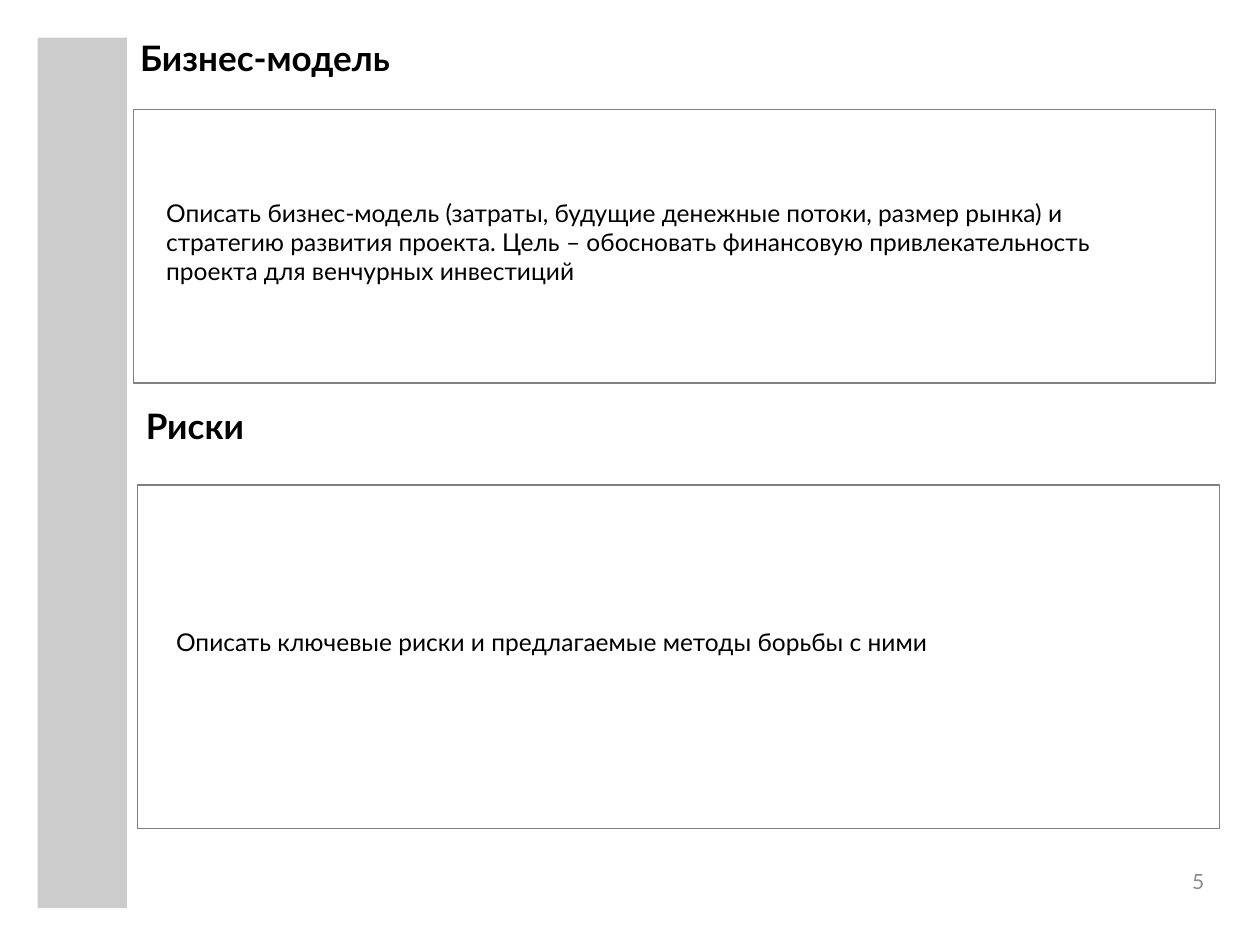
from pptx import Presentation
from pptx import util as u
from pptx.dml.color import RGBColor
from pptx.enum import shapes, text

FONT = "Lato"
BLACK, GREY, LIGHT, BORDER = "000000", "8C8C8C", "CCCCCC", "808080"

# Content: heading, description, then their places in cm (left, top, width, height)
SECTIONS = [
    dict(heading="Бизнес-модель", heading_at=(2.57, 0.61, 23.39, 1.73),
         frame_at=(2.69, 2.21, 21.82, 5.51),
         body="Описать бизнес-модель (затраты, будущие денежные потоки, размер рынка) "
              "и стратегию развития проекта. Цель – обосновать финансовую "
              "привлекательность проекта для венчурных инвестиций",
         body_at=(3.1, 3.86, 21.01, 2.06)),
    dict(heading="Риски", heading_at=(2.69, 8.03, 23.39, 1.73),
         frame_at=(2.77, 9.78, 21.82, 6.93),
         body="Описать ключевые риски и предлагаемые методы борьбы с ними",
         body_at=(3.3, 12.52, 21.01, 0.86)),
]
SIDEBAR_AT = (0.76, 0.76, 1.8, 17.55)
NUMBER, NUMBER_AT = "5", (23.29, 17.2, 0.99, 0.99)


def rgb(value):
    return RGBColor.from_string(value)


def place(sp, at):
    sp.left, sp.top, sp.width, sp.height = (u.Cm(v) for v in at)


def add_rect(s, at, fill=None, line=None):
    sp = s.shapes.add_shape(shapes.MSO_SHAPE.RECTANGLE, *(u.Cm(v) for v in at))
    sp.shadow.inherit = False
    if fill:
        sp.fill.solid()
        sp.fill.fore_color.rgb = rgb(fill)
    else:
        sp.fill.background()
    if line:
        sp.line.color.rgb = rgb(line)
        sp.line.width = u.Pt(0.75)
    else:
        sp.line.fill.background()


def write(sp, at, words, size, color=BLACK, bold=False,
          align=text.PP_ALIGN.LEFT, anchor=text.MSO_ANCHOR.TOP):
    place(sp, at)
    tf = sp.text_frame
    tf.word_wrap = True
    tf.auto_size = text.MSO_AUTO_SIZE.NONE
    tf.vertical_anchor = anchor
    p = tf.paragraphs[0]
    p.alignment = align
    r = p.add_run()
    r.text = words
    r.font.name, r.font.size, r.font.bold = FONT, u.Pt(size), bold
    r.font.color.rgb = rgb(color)
    return tf


def add_box(s):
    return s.shapes.add_textbox(0, 0, 0, 0)


prs = Presentation()
prs.slide_width, prs.slide_height = u.Cm(25.4), u.Cm(19.05)
s = prs.slides.add_slide(prs.slide_layouts[5])

# Sidebar and slide number
add_rect(s, SIDEBAR_AT, fill=LIGHT)
tf = write(add_box(s), NUMBER_AT, NUMBER, 12, GREY,
           align=text.PP_ALIGN.RIGHT, anchor=text.MSO_ANCHOR.MIDDLE)
tf.margin_right = tf.margin_bottom = 0

# Sections: the first heading is the slide title
for i, section in enumerate(SECTIONS):
    add_rect(s, section["frame_at"], line=BORDER)
    heading = s.shapes.title if i == 0 else add_box(s)
    write(heading, section["heading_at"], section["heading"], 20, bold=True)
    body = write(add_box(s), section["body_at"], section["body"], 14)
    body.auto_size = text.MSO_AUTO_SIZE.SHAPE_TO_FIT_TEXT

prs.save("out.pptx")
